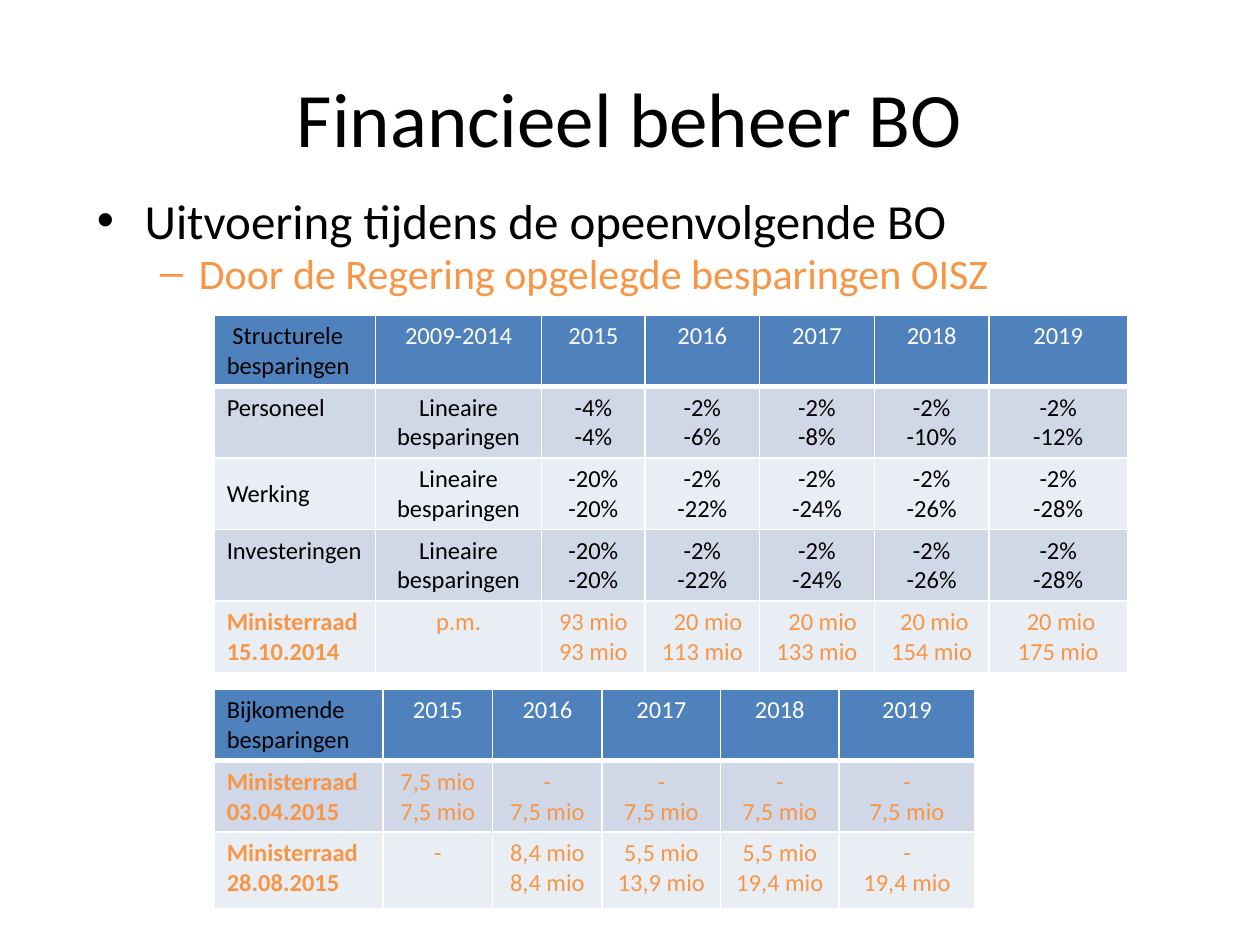
from lxml import etree
from pptx import Presentation
from pptx.dml.color import RGBColor
from pptx.enum.text import MSO_ANCHOR, PP_ALIGN
from pptx.oxml.ns import qn
from pptx.util import Inches, Pt

LEFT, CENTER = PP_ALIGN.LEFT, PP_ALIGN.CENTER
TOP, MIDDLE = MSO_ANCHOR.TOP, MSO_ANCHOR.MIDDLE
BLACK, WHITE, ORANGE, BLUE = "000000", "FFFFFF", "F79646", "4F81BD"
BANDS = ["E9EDF4", "D0D8E8"]

# Grid of 100 columns by 75 rows
GRID = Inches(0.1)


def paint(fill, color):
    fill.solid()
    fill.fore_color.rgb = RGBColor.from_string(color)


def write(paragraph, text, size=14, color=BLACK, bold=False, align=LEFT,
          margin=0, indent=0, bullet=None):
    properties = paragraph._p.get_or_add_pPr()
    properties.set("marL", str(int(margin * GRID)))
    properties.set("indent", str(int(indent * GRID)))
    if bullet:
        etree.SubElement(properties, qn("a:buFont"), typeface="Arial")
        etree.SubElement(properties, qn("a:buChar"), char=bullet)
    paragraph.alignment = align
    run = paragraph.add_run()
    run.text = text
    run.font.name = "Calibri"
    run.font.size = Pt(size)
    run.font.bold = bold
    paint(run.font.fill, color)


presentation = Presentation()
presentation.slide_width = 100 * GRID
presentation.slide_height = 75 * GRID
slide = presentation.slides.add_slide(presentation.slide_layouts[6])

# Title and bullets
title, body = [
    slide.shapes.add_textbox(*[int(length * GRID) for length in box]).text_frame
    for box in [(5, 3, 90, 12.5), (6.7, 15.5, 86.6, 58.2)]
]
title.word_wrap = body.word_wrap = True
title.vertical_anchor = MIDDLE
write(title.paragraphs[0], "Financieel beheer BO", size=44, align=CENTER)

first, second = body.paragraphs[0], body.add_paragraph()
second.level = 1
first.line_spacing = second.line_spacing = 0.8
second.space_before = Pt(4.8)
write(first, "Uitvoering tijdens de opeenvolgende BO", size=28,
      margin=3.8, indent=-3.8, bullet="•")
write(second, "Door de Regering opgelegde besparingen OISZ", size=24, color=ORANGE,
      margin=8.1, indent=-3.1, bullet="–")

# Tables: top, column widths, row heights, cells with lines split by "|"
YEARS = ["2015", "2016", "2017", "2018", "2019"]
LINEAR = "Lineaire besparingen"
CUTS = ["-20%|-20%", "-2%|-22%", "-2%|-24%", "-2%|-26%", "-2%|-28%"]
tables = [
    (25, [12.8, 13.2, 8.2, 9.1, 9.1, 9.1, 11], [5.2] * 5, [
        ["Structurele besparingen", "2009-2014", *YEARS],
        ["Personeel", LINEAR, "-4%|-4%", "-2%|-6%", "-2%|-8%", "-2%|-10%", "-2%|-12%"],
        ["Werking", LINEAR, *CUTS],
        ["Investeringen", LINEAR, *CUTS],
        ["Ministerraad 15.10.2014", "p.m.", "93 mio|93 mio", "20 mio|113 mio",
         "20 mio|133 mio", "20 mio|154 mio", "20 mio|175 mio"],
    ]),
    (54.7, [13.4, 8.7, 8.7, 9.4, 9.4, 10.8], [5.2, 5.2, 6.1], [
        ["Bijkomende besparingen", *YEARS],
        ["Ministerraad 03.04.2015", "7,5 mio|7,5 mio", *["-|7,5 mio"] * 4],
        ["Ministerraad 28.08.2015", "-", "8,4 mio|8,4 mio", "5,5 mio|13,9 mio",
         "5,5 mio 19,4 mio", "-|19,4 mio"],
    ]),
]

for top, widths, heights, rows in tables:
    table = slide.shapes.add_table(
        len(heights), len(widths), 17 * GRID, int(top * GRID),
        int(sum(widths) * GRID), int(sum(heights) * GRID)).table
    for column, width in zip(table.columns, widths):
        column.width = int(width * GRID)
    for row, height in zip(table.rows, heights):
        row.height = int(height * GRID)

    for r, texts in enumerate(rows):
        decided = texts[0].startswith("Ministerraad")
        for c, text in enumerate(texts):
            cell = table.cell(r, c)
            cell.vertical_anchor = MIDDLE if texts[0] == "Werking" else TOP

            # White borders, thicker beside the header
            for side in "LRTB":
                thick = (r == 0 and side == "B") or (r == 1 and side == "T")
                line = etree.SubElement(cell._tc.get_or_add_tcPr(), qn(f"a:ln{side}"),
                                        w=str(Pt(3 if thick else 1)))
                solid = etree.SubElement(line, qn("a:solidFill"))
                etree.SubElement(solid, qn("a:srgbClr"), val=WHITE)
            paint(cell.fill, BANDS[r % 2] if r else BLUE)

            # Cell text; short amounts are set in to line up with longer ones
            color = ORANGE if decided else WHITE if r == 0 and c else BLACK
            for i, line_text in enumerate(text.split("|")):
                frame = cell.text_frame
                paragraph = frame.add_paragraph() if i else frame.paragraphs[0]
                margin = (0.9 if c < 5 else 0.45) if line_text == "20 mio" else 0
                write(paragraph, line_text, color=color, bold=decided and c == 0,
                      align=CENTER if c else LEFT, margin=margin,
                      indent=0.45 if line_text.startswith("Structurele") else 0)

presentation.save("out.pptx")
